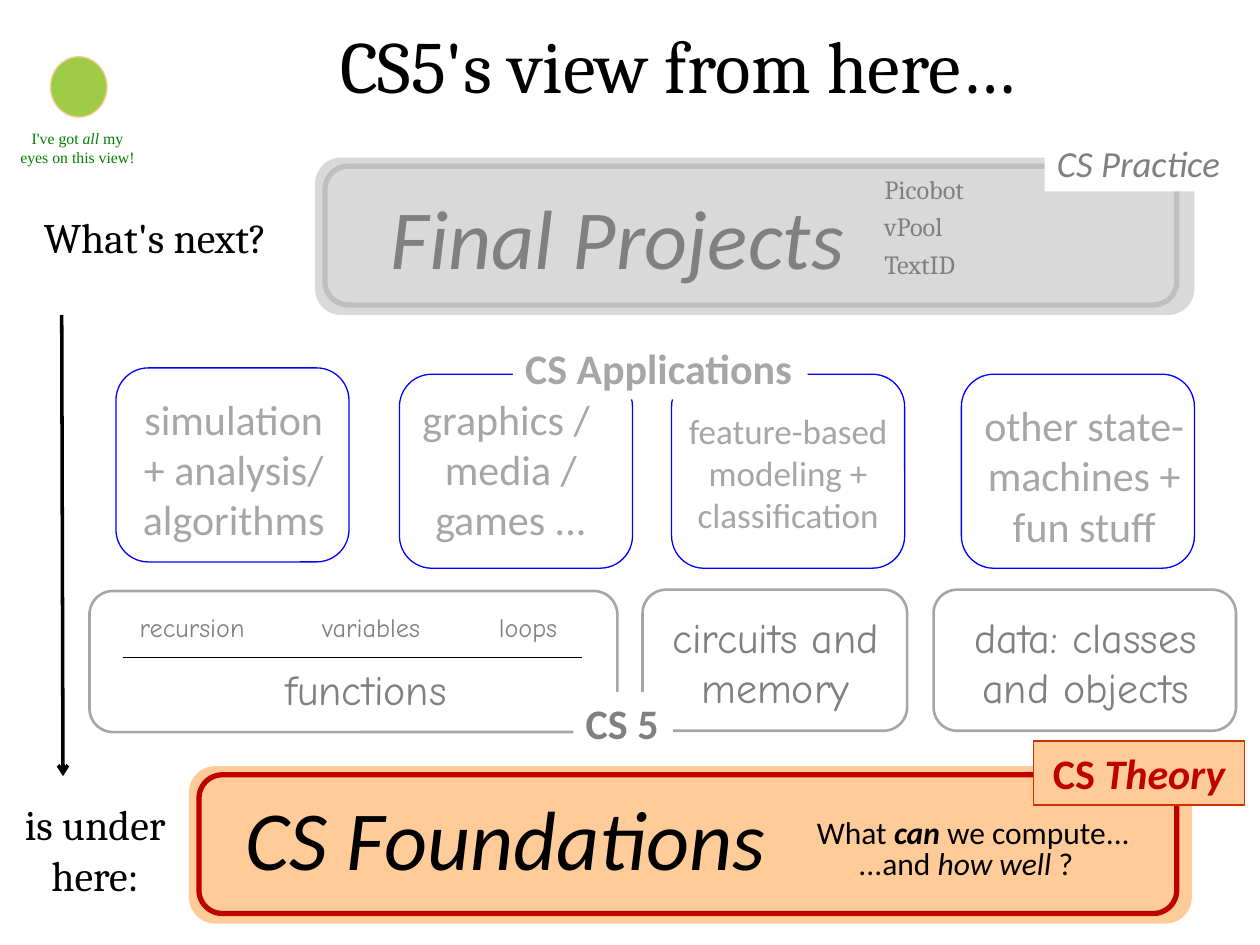
from pptx import Presentation
from pptx.dml.color import RGBColor
from pptx.enum.shapes import MSO_CONNECTOR, MSO_SHAPE
from pptx.enum.text import MSO_ANCHOR, PP_ALIGN
from pptx.oxml.ns import qn
from pptx.util import Inches, Pt
from lxml import etree

STRAIGHT = MSO_CONNECTOR.STRAIGHT
ROUNDED = MSO_SHAPE.ROUNDED_RECTANGLE
OVAL = MSO_SHAPE.OVAL
LEFT, CENTER = PP_ALIGN.LEFT, PP_ALIGN.CENTER
TOP = MSO_ANCHOR.TOP

BLACK, WHITE, PEACH, RED = "000000", "FFFFFF", "FFCC99", "C00000"
GRAY, SILVER, BLUE = "808080", "A6A6A6", "0000FF"
SANS, SERIF, COMIC = "Calibri", "Cambria", "Comic Neue"

FOUNDATIONS_PANEL = (1.5, 6.08, 7.96, 1.25)
FOUNDATIONS_FRAME = (1.58, 6.15, 7.76, 1.1)
PROJECTS_PANEL = (2.5, 1.25, 6.98, 1.25)
PROJECTS_FRAME = (2.58, 1.32, 6.76, 1.1)

CARD_SIZE = (1.85, 1.54)
APPLICATIONS = [
    ("simulation\v+ analysis/ algorithms", 24, (1, 3.07, 1.71, 1.31), (0.92, 2.92)),
    ("graphics / \vmedia / games ...", 24, (3.2, 3.07, 1.71, 1.31), (3.17, 2.97)),
    ("feature-based modeling + classification", 20, (5.35, 3.2, 1.81, 1.11), (5.33, 2.97)),
    ("other state-machines + fun stuff", 24, (7.6, 3.12, 2.01, 1.31), (7.63, 2.97)),
]
COURSE_TOPICS = [
    ("recursion", 15, (0.9, 4.8, 1.25, 0.35)),
    ("variables", 15, (2.32, 4.8, 1.25, 0.35)),
    ("loops", 15, (3.73, 4.8, 0.92, 0.35)),
    ("functions", 24, (1.9, 5.22, 2.01, 0.51)),
    ("circuits and memory", 24, (4.9, 4.8, 2.51, 0.91)),
    ("data: classes and objects", 24, (7.48, 4.8, 2.27, 0.91)),
]
COURSE_FRAMES = [(0.71, 4.69, 4.19, 1.12), (5.1, 4.68, 2.1, 1.12), (7.41, 4.68, 2.4, 1.12)]

PROJECTS = ["Picobot", "vPool", "TextID"]
MASCOT_SAYS = [("I've got ", ""), ("all ", "i"), ("my eyes on this view!", "")]
THEORY = [("CS ", "b"), ("Theory", "bi")]
QUESTION = [("What ", ""), ("can ", "bi"), ("we compute...", "")]
FOLLOW_UP = [("...and ", ""), ("how well ", "i"), ("?", "")]


def color(value):
    return RGBColor.from_string(value)


def paint(shape, fill=None, line=None, weight=0.75):
    if fill:
        shape.fill.solid()
        shape.fill.fore_color.rgb = color(fill)
    else:
        shape.fill.background()
    if line:
        shape.line.color.rgb = color(line)
        shape.line.width = Pt(weight)
    else:
        shape.line.fill.background()


def add_panel(page, at, kind=ROUNDED, **look):
    panel = page.shapes.add_shape(kind, *map(Inches, at))
    panel.shadow.inherit = False
    if kind == ROUNDED:
        panel.adjustments[0] = 0.167
    paint(panel, **look)


def add_text(page, paragraphs, at, size=24, font=SANS, ink=BLACK, style="",
             align=CENTER, wrap=True, spacing=None, before=0, **look):
    box = page.shapes.add_textbox(*map(Inches, at))
    paint(box, **look)
    frame = box.text_frame
    frame.word_wrap = wrap
    frame.vertical_anchor = TOP
    for index, content in enumerate(paragraphs):
        para = frame.add_paragraph() if index else frame.paragraphs[0]
        para.alignment = align
        para.space_before = Pt(before)
        if spacing:
            para.line_spacing = Pt(spacing)
        spans = [(content, style)] if isinstance(content, str) else content
        for words, emphasis in spans:
            for number, part in enumerate(words.split("\v")):
                if number:
                    para.add_line_break()
                span = para.add_run()
                span.text = part
                span.font.size = Pt(size)
                span.font.name = font
                span.font.bold = "b" in emphasis
                span.font.italic = "i" in emphasis
                span.font.color.rgb = color(ink)


def add_line(page, start, end, weight, arrow=False):
    line = page.shapes.add_connector(STRAIGHT, *map(Inches, start + end))
    line.line.color.rgb = color(BLACK)
    line.line.width = Pt(weight)
    properties = line._element.spPr
    if arrow:
        etree.SubElement(properties.find(qn("a:ln")), qn("a:tailEnd"), type="arrow")
    etree.SubElement(properties, qn("a:effectLst"))


def add_foundations(page):
    add_panel(page, FOUNDATIONS_PANEL, fill=PEACH)
    add_text(page, ["CS Foundations"], (1.75, 6.19, 4.53, 0.91), size=48, style="i", wrap=False)
    add_panel(page, FOUNDATIONS_FRAME, line=RED, weight=3)
    add_text(page, [THEORY], (8.2, 5.88, 1.68, 0.51), ink=RED, fill=PEACH, line="CC3300")
    add_text(page, [QUESTION], (6.37, 6.4, 2.71, 0.4), size=18, wrap=False)
    add_text(page, [FOLLOW_UP], (6.67, 6.65, 1.99, 0.4), size=18, wrap=False)


def add_applications(page):
    for words, size, at, corner in APPLICATIONS:
        add_text(page, [words], at, size=size, ink=SILVER)
        add_panel(page, corner + CARD_SIZE, line=BLUE)
    add_text(page, ["CS Applications"], (4.07, 2.67, 2.34, 0.5), ink=SILVER, style="b",
             align=LEFT, wrap=False, fill=WHITE)


def add_course(page):
    for words, size, at in COURSE_TOPICS:
        add_text(page, [words], at, size=size, font=COMIC, ink=GRAY)
    add_line(page, (0.98, 5.22), (4.62, 5.22), 0.75)
    for at in COURSE_FRAMES:
        add_panel(page, at, line=SILVER, weight=1.5)
    add_text(page, ["CS 5"], (4.55, 5.49, 0.79, 0.51), ink=GRAY, style="b",
             align=LEFT, wrap=False, fill=WHITE)


def add_projects(page):
    add_panel(page, PROJECTS_PANEL, fill="D9D9D9")
    add_text(page, ["Final Projects"], (2.98, 1.42, 3.84, 0.91), size=48, ink=GRAY,
             style="i", wrap=False)
    add_panel(page, PROJECTS_FRAME, line="BFBFBF", weight=3)
    add_text(page, PROJECTS, (6.92, 1.38, 0.88, 0.94), size=15, font=SERIF, ink=GRAY,
             align=LEFT, wrap=False, spacing=14, before=7.5)
    add_text(page, ["CS Practice"], (8.29, 1.07, 1.61, 0.45), size=21, ink=GRAY,
             style="i", align=LEFT, fill=WHITE)


def add_margin(page):
    add_text(page, ["CS5's view from here…"], (1.42, 0.11, 7.92, 0.81), size=42, font=SERIF)
    add_panel(page, (0.4, 0.45, 0.45, 0.48), OVAL, fill="9ECC46", line=PEACH)
    add_text(page, [MASCOT_SAYS], (0.03, 0.97, 1.17, 0.4), size=9,
             font="Times New Roman", ink="008000")
    add_text(page, ["What's next?"], (0.25, 1.63, 2.07, 0.5), font=SERIF, align=LEFT)
    add_line(page, (0.49, 2.5), (0.5, 6.16), 2, arrow=True)
    add_text(page, ["is under here:"], (0.07, 6.29, 1.37, 0.91), font=SERIF)


def main():
    deck = Presentation()
    deck.slide_width, deck.slide_height = Inches(10), Inches(7.5)
    page = deck.slides.add_slide(deck.slide_layouts[6])
    for add_section in (add_applications, add_course, add_foundations, add_projects, add_margin):
        add_section(page)
    deck.save("out.pptx")


if __name__ == "__main__":
    main()
